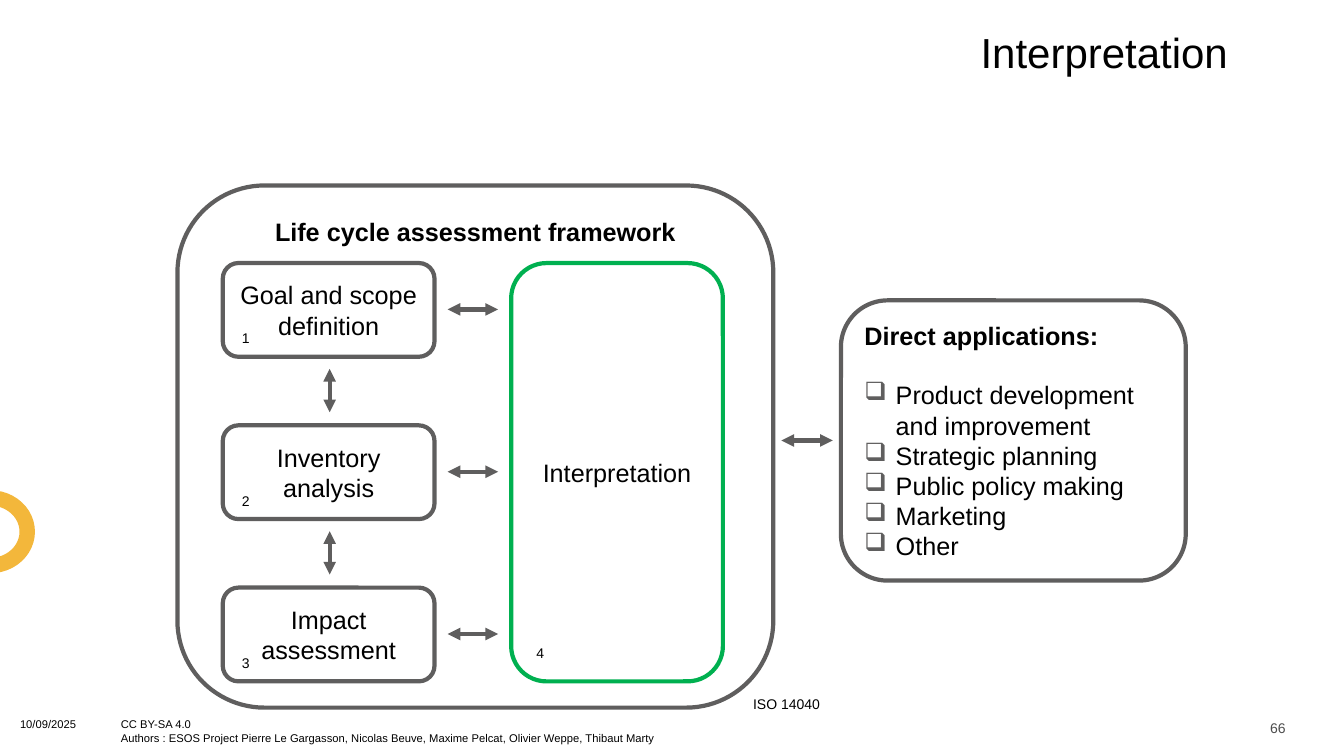
from lxml import etree
from pptx import Presentation
from pptx.dml.color import RGBColor
from pptx.enum.shapes import MSO_CONNECTOR, MSO_SHAPE
from pptx.enum.text import MSO_ANCHOR, PP_ALIGN
from pptx.oxml.ns import qn
from pptx.util import Inches, Pt

ROUND = MSO_SHAPE.ROUNDED_RECTANGLE
OVAL = MSO_SHAPE.OVAL
STRAIGHT = MSO_CONNECTOR.STRAIGHT
TOP, MIDDLE = MSO_ANCHOR.TOP, MSO_ANCHOR.MIDDLE
LEFT, CENTER, RIGHT = PP_ALIGN.LEFT, PP_ALIGN.CENTER, PP_ALIGN.RIGHT

BLACK = RGBColor(0x00, 0x00, 0x00)
GRAY = RGBColor(0x5F, 0x5E, 0x5E)
DARK = RGBColor(0x4D, 0x4D, 0x4D)
GREEN = RGBColor(0x00, 0xB0, 0x50)
GOLD = RGBColor(0xF3, 0xB7, 0x3B)

FONT = "Arial"
STEPS = ["Goal and scope definition", "Inventory analysis", "Impact assessment"]
USES = ["Product development and improvement", "Strategic planning",
        "Public policy making", "Marketing", "Other"]
CREDITS = [
    "10/09/2025\tCC BY-SA 4.0",
    "\tAuthors : ESOS Project Pierre Le Gargasson, Nicolas Beuve, "
    "Maxime Pelcat, Olivier Weppe, Thibaut Marty",
]
STEP_TOP, STEP_GAP, STEP_HIGH = 2.61, 1.61, 0.93


def add_run(para, text, size, color=BLACK, bold=False):
    run = para.add_run()
    run.text = text
    run.font.name = FONT
    run.font.size = Pt(size)
    run.font.bold = bold
    run.font.color.rgb = color


def add_text(slide, box, text, size, color=BLACK, align=LEFT, inset=True, space=None):
    frame = slide.shapes.add_textbox(*map(Inches, box)).text_frame
    frame.word_wrap = True
    if not inset:
        frame.margin_left = frame.margin_right = 0
        frame.margin_top = frame.margin_bottom = 0
    para = frame.paragraphs[0]
    para.alignment = align
    if space:
        para.line_spacing = space
    add_run(para, text, size, color)
    return para


def add_label(slide, box, text):
    para = add_text(slide, box, text, 10, inset=False, space=1.2)
    para._p.get_or_add_pPr().set("marL", str(Inches(0.09)))


def add_outline(slide, kind, box, color=GRAY, width=3):
    shape = slide.shapes.add_shape(kind, *map(Inches, box))
    shape.shadow.inherit = False
    shape.fill.background()
    shape.line.color.rgb = color
    shape.line.width = Pt(width)
    return shape


def add_panel(slide, box, text, color=GRAY, anchor=MIDDLE, align=CENTER, bold=False):
    frame = add_outline(slide, ROUND, box, color).text_frame
    frame.word_wrap = True
    frame.vertical_anchor = anchor
    para = frame.paragraphs[0]
    para.alignment = align
    add_run(para, text, 18, bold=bold)
    return frame


def add_bullet(frame, text, before=0):
    para = frame.add_paragraph()
    props = para._p.get_or_add_pPr()
    props.set("marL", str(Inches(0.31)))
    props.set("indent", str(Inches(-0.31)))
    tint = etree.SubElement(props, qn("a:buClr"))
    etree.SubElement(tint, qn("a:srgbClr")).set("val", str(GRAY))
    etree.SubElement(props, qn("a:buChar")).set("char", "❑")
    para.alignment = LEFT
    para.space_before = Pt(before)
    add_run(para, text, 18)


def add_arrow(slide, *ends):
    arrow = slide.shapes.add_connector(STRAIGHT, *map(Inches, ends))
    arrow.line.color.rgb = GRAY
    arrow.line.width = Pt(3)
    line = arrow.line._get_or_add_ln()
    for tag in ("a:headEnd", "a:tailEnd"):
        etree.SubElement(line, qn(tag)).set("type", "triangle")
    etree.SubElement(arrow._element.spPr, qn("a:effectLst"))


def add_footer(slide):
    frame = slide.shapes.add_textbox(*map(Inches, (0.1, 7.07, 6.72, 0.37))).text_frame
    frame.word_wrap = True
    for index, text in enumerate(CREDITS):
        para = frame.add_paragraph() if index else frame.paragraphs[0]
        tabs = etree.SubElement(para._p.get_or_add_pPr(), qn("a:tabLst"))
        tab = etree.SubElement(tabs, qn("a:tab"))
        tab.set("pos", str(Inches(1)))
        tab.set("algn", "l")
        add_run(para, text, 8)
    add_text(slide, (9.85, 7.09, 3, 0.27), "66", 10, DARK, RIGHT)


def add_steps(slide):
    for index, text in enumerate(STEPS):
        top = STEP_TOP + index * STEP_GAP
        add_panel(slide, (2.21, top, 2.1, STEP_HIGH), text)
        add_label(slide, (2.31, top + 0.63, 0.3, 0.31), str(index + 1))
        add_arrow(slide, 4.94, top + 0.46, 4.44, top + 0.46)
        if index:
            add_arrow(slide, 3.27, top - 0.56, 3.27, top - 0.13)


def add_uses(slide):
    frame = add_panel(slide, (8.34, 2.98, 3.42, 2.78), "Direct applications:",
                      align=LEFT, bold=True)
    for index, text in enumerate(USES):
        add_bullet(frame, text, 0 if index else 21)
    add_arrow(slide, 8.26, 4.37, 7.75, 4.37)


def main():
    deck = Presentation()
    deck.slide_width, deck.slide_height = Inches(13.33), Inches(7.5)
    slide = deck.slides.add_slide(deck.slide_layouts[6])
    add_footer(slide)
    add_outline(slide, OVAL, (-0.46, 4.94, 0.73, 0.67), GOLD, 11)
    add_text(slide, (0.6, 0.32, 11.58, 0.52), "Interpretation", 30,
             align=RIGHT, inset=False, space=0.9)
    add_panel(slide, (1.76, 1.84, 5.91, 5.18), "Life cycle assessment framework",
              anchor=TOP, bold=True)
    add_steps(slide)
    add_panel(slide, (5.07, STEP_TOP, 2.1, 2 * STEP_GAP + STEP_HIGH),
              "Interpretation", GREEN)
    add_label(slide, (5.23, 6.36, 0.3, 0.31), "4")
    add_uses(slide)
    add_label(slide, (7.38, 6.87, 0.96, 0.31), "ISO 14040")
    deck.save("out.pptx")


if __name__ == "__main__":
    main()
